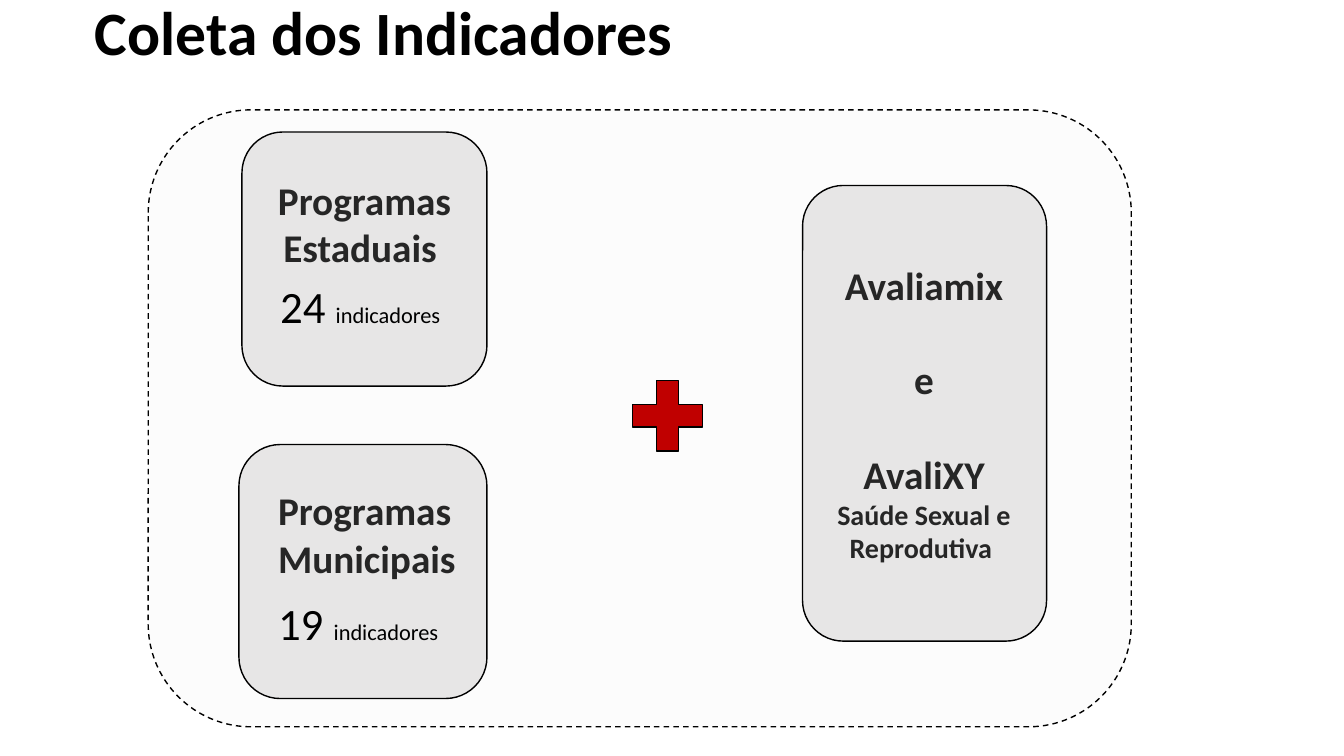
from dataclasses import dataclass

from lxml.etree import SubElement
from pptx import Presentation
from pptx.dml.color import RGBColor
from pptx.enum.dml import MSO_LINE
from pptx.enum.shapes import MSO_SHAPE
from pptx.enum.text import MSO_ANCHOR, MSO_AUTO_SIZE, PP_ALIGN
from pptx.oxml.ns import qn
from pptx.shapes.autoshape import Shape
from pptx.shapes.shapetree import GroupShapes, SlideShapes
from pptx.slide import Slide
from pptx.text.text import TextFrame
from pptx.util import Inches, Pt

BLACK = RGBColor(0x00, 0x00, 0x00)
DARK_GRAY = RGBColor(0x26, 0x26, 0x26)
LIGHT_GRAY = RGBColor(0xE7, 0xE6, 0xE6)
RED = RGBColor(0xC0, 0x00, 0x00)

Box = tuple[float, float, float, float]


@dataclass(frozen=True)
class Run:
    text: str
    size: int
    color: RGBColor = DARK_GRAY
    bold: bool = True


@dataclass(frozen=True)
class Line:
    runs: tuple[Run, ...]
    alignment: PP_ALIGN = PP_ALIGN.CENTER
    space_before: int = 0


@dataclass(frozen=True)
class Label:
    box: Box
    lines: tuple[Line, ...]


@dataclass(frozen=True)
class Card:
    box: Box
    labels: tuple[Label, ...]


def count_label(box: Box, count: int) -> Label:
    runs = (Run(f"{count} ", 32, BLACK, False), Run("indicadores", 16, BLACK, False))
    return Label(box, (Line(runs, PP_ALIGN.LEFT),))


CARDS = (
    Card((7.96, 1.84, 2.42, 4.52), (
        Label((8.2, 2.54, 1.93, 3.13), (
            Line((Run("Avaliamix", 28),)),
            Line((Run("e", 28),), space_before=34),
            Line((Run("AvaliXY", 28),), space_before=34),
            Line((Run("Saúde Sexual e Reprodutiva ", 20),)),
        )),
    )),
    Card((2.4, 1.31, 2.43, 2.52), (
        count_label((2.68, 2.72, 1.87, 0.64), 24),
        Label((2.64, 1.7, 1.95, 1.04), (Line((Run("Programas Estaduais ", 28),)),)),
    )),
    Card((2.37, 4.41, 2.46, 2.52), (
        count_label((2.66, 5.86, 1.9, 0.64), 19),
        Label((2.66, 4.78, 2.08, 1.04), (
            Line((Run("Programas Municipais", 28),), PP_ALIGN.LEFT),
        )),
    )),
)


def set_attributes(target: object, values: dict[str, object]) -> None:
    for name, value in values.items():
        setattr(target, name, value)


def add_outlined_shape(
    shapes: SlideShapes | GroupShapes, kind: MSO_SHAPE, box: Box, color: RGBColor
) -> Shape:
    shape = shapes.add_shape(kind, *map(Inches, box))
    shape.shadow.inherit = False
    shape.fill.solid()
    shape.fill.fore_color.rgb = color
    shape.line.color.rgb = BLACK
    shape.line.width = Pt(1)
    return shape


def write_lines(text_frame: TextFrame, lines: tuple[Line, ...]) -> None:
    for index, line in enumerate(lines):
        paragraph = text_frame.add_paragraph() if index else text_frame.paragraphs[0]
        set_attributes(paragraph, {
            "alignment": line.alignment,
            "space_before": Pt(line.space_before),
        })
        for run in line.runs:
            text_run = paragraph.add_run()
            text_run.text = run.text
            set_attributes(text_run.font, {
                "name": "Calibri", "size": Pt(run.size), "bold": run.bold,
            })
            text_run.font.color.rgb = run.color


def add_title(slide: Slide) -> None:
    title = slide.shapes.title
    set_attributes(title, {
        "left": Inches(0.84), "top": Inches(0),
        "width": Inches(11.53), "height": Inches(1.44),
    })
    set_attributes(title.text_frame, {
        "vertical_anchor": MSO_ANCHOR.TOP,
        "margin_top": Inches(0.02),
        "word_wrap": True,
        "auto_size": MSO_AUTO_SIZE.NONE,
    })
    title_run = Run("Coleta dos Indicadores", 44, BLACK)
    write_lines(title.text_frame, (Line((title_run,), PP_ALIGN.LEFT),))
    title.text_frame.paragraphs[0].line_spacing = 0.9


def add_frame(slide: Slide) -> None:
    frame = add_outlined_shape(
        slide.shapes, MSO_SHAPE.ROUNDED_RECTANGLE, (1.47, 1.09, 9.75, 6.12), LIGHT_GRAY
    )
    frame.line.dash_style = MSO_LINE.DASH
    fill_color = frame.fill._xPr.find(qn("a:solidFill"))[0]
    SubElement(fill_color, qn("a:alpha"), val="10000")


def add_card(slide: Slide, card: Card) -> None:
    group = slide.shapes.add_group_shape()
    add_outlined_shape(group.shapes, MSO_SHAPE.ROUNDED_RECTANGLE, card.box, LIGHT_GRAY)
    for label in card.labels:
        text_box = group.shapes.add_textbox(*map(Inches, label.box))
        set_attributes(text_box.text_frame, {
            "word_wrap": True, "auto_size": MSO_AUTO_SIZE.SHAPE_TO_FIT_TEXT,
        })
        write_lines(text_box.text_frame, label.lines)


def main() -> None:
    presentation = Presentation()
    set_attributes(presentation, {
        "slide_width": Inches(13.33), "slide_height": Inches(7.5),
    })
    slide = presentation.slides.add_slide(presentation.slide_layouts[5])
    add_frame(slide)
    add_title(slide)
    for card in CARDS:
        add_card(slide, card)
    add_outlined_shape(slide.shapes, MSO_SHAPE.MATH_PLUS, (6.15, 3.65, 0.94, 0.95), RED)
    presentation.save("out.pptx")


if __name__ == "__main__":
    main()
